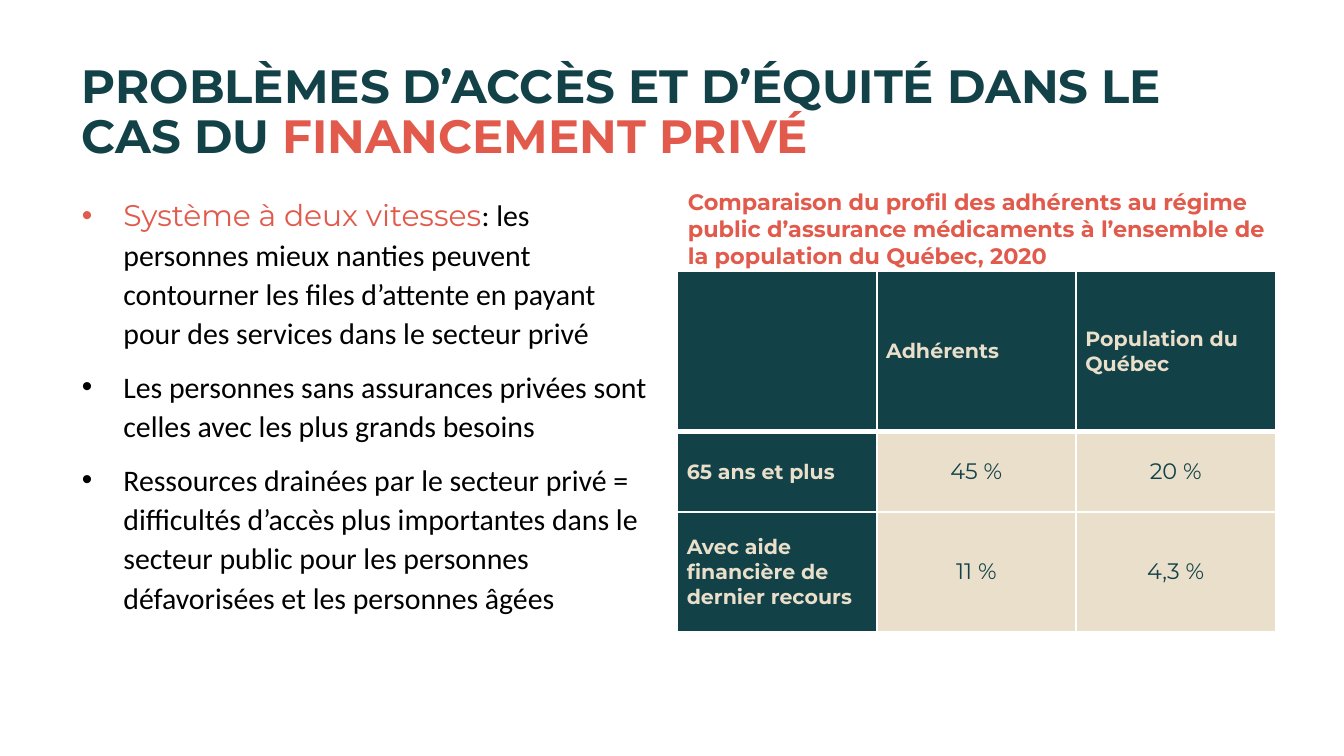
from lxml import etree
from pptx import Presentation
from pptx import util as u
from pptx.dml.color import RGBColor
from pptx.enum import text
from pptx.oxml.ns import qn

HUES = {"teal": "124248", "coral": "E15A4B", "sand": "EADFCB",
        "black": "000000", "white": "FFFFFF"}
HEAD, BODY = "Montserrat", "Calibri"


class Deck:
    def __init__(self, wide, high):
        self.prs = Presentation()
        self.prs.slide_width = u.Inches(wide)
        self.prs.slide_height = u.Inches(high)
        self.slide = self.prs.slides.add_slide(self.prs.slide_layouts[5])

    def hue(self, name):
        return RGBColor.from_string(HUES[name])

    def run(self, para, words, size, hue, face=HEAD, bold=False):
        run = para.add_run()
        run.text = words
        font = run.font
        font.size, font.name, font.bold = u.Pt(size), face, bold
        font.color.rgb = self.hue(hue)

    def title(self, box, runs, size):
        shape = self.slide.shapes.title
        shape.left, shape.top, shape.width, shape.height = map(u.Inches, box)
        frame = shape.text_frame
        frame.word_wrap = True
        frame.auto_size = text.MSO_AUTO_SIZE.NONE
        frame.vertical_anchor = text.MSO_ANCHOR.MIDDLE
        para = frame.paragraphs[0]
        para.alignment = text.PP_ALIGN.LEFT
        para.line_spacing = 0.9
        for words, hue in runs:
            self.run(para, words, size, hue, bold=True)

    def box(self, box):
        frame = self.slide.shapes.add_textbox(*map(u.Inches, box)).text_frame
        frame.word_wrap = True
        return frame

    def label(self, box, words, size, hue):
        self.run(self.box(box).paragraphs[0], words, size, hue, bold=True)

    def list(self, box, items, size):
        frame = self.box(box)
        for i, runs in enumerate(items):
            para = frame.add_paragraph() if i else frame.paragraphs[0]
            props = para._p.get_or_add_pPr()
            props.set("marL", str(u.Inches(0.31)))
            props.set("indent", str(-u.Inches(0.31)))
            etree.SubElement(props, qn("a:buFont"), typeface="Arial")
            etree.SubElement(props, qn("a:buChar"), char="•")
            para.line_spacing = 1.1
            if i:
                para.space_before = u.Pt(7.5)
            for words, hue, face in runs:
                self.run(para, words, size, hue, face)

    def edge(self, cell, side, width):
        line = etree.SubElement(cell._tc.get_or_add_tcPr(), qn("a:ln" + side),
                                w=str(u.Pt(width)))
        fill = etree.SubElement(line, qn("a:solidFill"))
        etree.SubElement(fill, qn("a:srgbClr"), val=HUES["white"])

    def cell(self, cell, words, row, col):
        head = row == 0 or col == 0
        for side in "LRTB":
            thick = (row, side) in ((0, "B"), (1, "T"))
            self.edge(cell, side, 3 if thick else 1)
        cell.fill.solid()
        cell.fill.fore_color.rgb = self.hue("teal" if head else "sand")
        cell.vertical_anchor = text.MSO_ANCHOR.MIDDLE
        cell.margin_left = cell.margin_right = u.Inches(0.07)
        cell.margin_top = cell.margin_bottom = 0
        if words:
            para = cell.text_frame.paragraphs[0]
            if head:
                self.run(para, words, 11, "sand", bold=True)
            else:
                para.alignment = text.PP_ALIGN.CENTER
                self.run(para, words, 12, "teal")

    def table(self, box, highs, rows):
        count = len(rows[0])
        table = self.slide.shapes.add_table(
            len(rows), count, *map(u.Inches, box)).table
        for col in table.columns:
            col.width = u.Inches(box[2] / count)
        for r, (high, row) in enumerate(zip(highs, rows)):
            table.rows[r].height = u.Inches(high)
            for c, words in enumerate(row):
                self.cell(table.cell(r, c), words, r, c)


def main():
    deck = Deck(10, 10 * 9 / 16)
    deck.title((0.51, 0.3, 8.98, 1.09), [
        ("PROBLÈMES D’ACCÈS ET D’ÉQUITÉ DANS LE CAS DU ", "teal"),
        ("FINANCEMENT PRIVÉ", "coral")], 25)
    deck.list((0.51, 1.39, 4.49, 3.31), [
        [("Système à deux vitesses", "coral", HEAD),
         (": les personnes mieux nanties peuvent contourner les files "
          "d’attente en payant pour des services dans le secteur privé",
          "black", BODY)],
        [("Les personnes sans assurances privées sont celles avec les plus "
          "grands besoins", "black", BODY)],
        [("Ressources drainées par le secteur privé = difficultés d’accès "
          "plus importantes dans le secteur public pour les personnes "
          "défavorisées et les personnes âgées", "black", BODY)]], 16)
    deck.table((5.04, 2.02, 4.45, 2.68), (1.19, 0.6, 0.89), [
        ("", "Adhérents", "Population du Québec"),
        ("65 ans et plus", "45 %", "20 %"),
        ("Avec aide financière de dernier recours", "11 %", "4,3 %")])
    deck.label((5.02, 1.35, 4.5, 0.71),
               "Comparaison du profil des adhérents au régime public "
               "d’assurance médicaments à l’ensemble de la population du "
               "Québec, 2020", 12, "coral")
    deck.prs.save("out.pptx")


if __name__ == "__main__":
    main()
